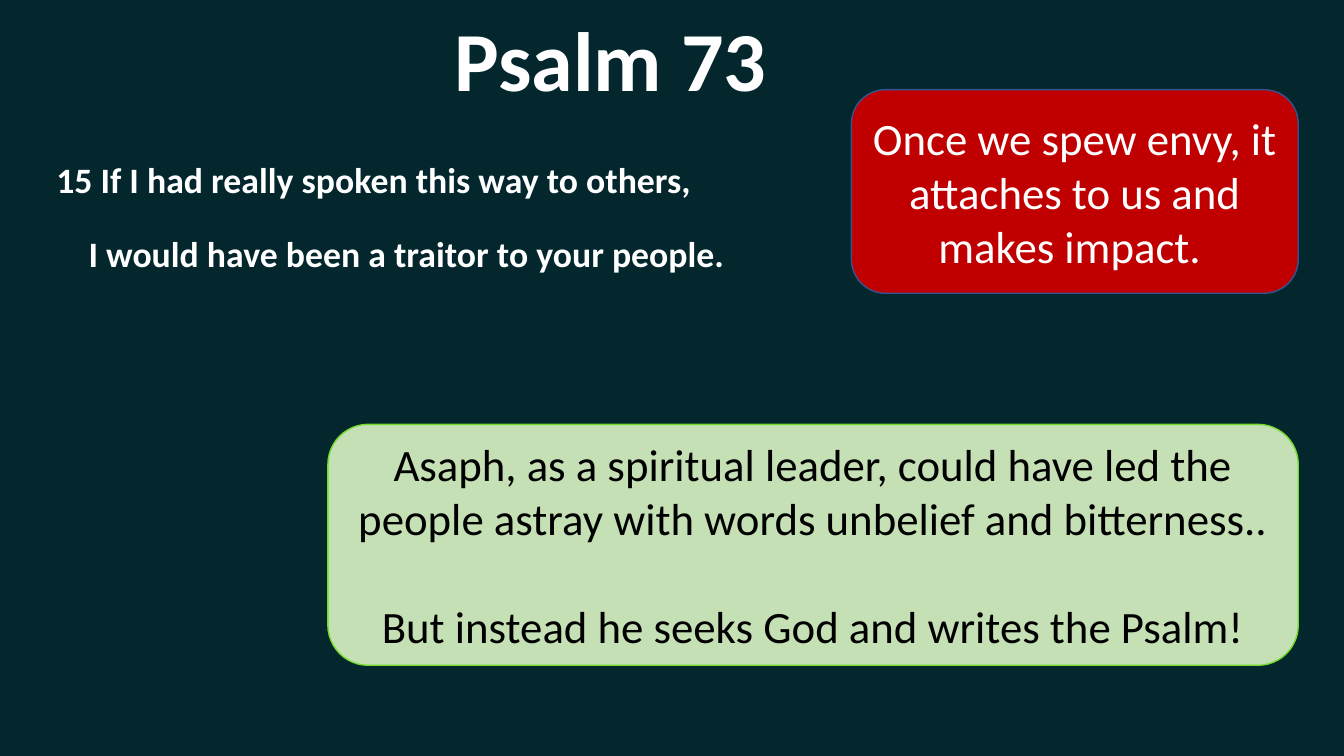
from pptx import Presentation
from pptx.dml.color import RGBColor
from pptx.enum.shapes import MSO_SHAPE
from pptx.enum.text import MSO_ANCHOR, PP_ALIGN
from pptx.util import Inches, Pt

SLIDE_WIDTH, SLIDE_HEIGHT = Inches(13.33), Inches(7.5)
FONT = "Calibri"
BACKGROUND = RGBColor(0x03, 0x27, 0x2D)
WHITE = RGBColor(0xFF, 0xFF, 0xFF)
BLACK = RGBColor(0x00, 0x00, 0x00)
RED = RGBColor(0xC0, 0x00, 0x00)
BLUE = RGBColor(0x32, 0x54, 0x91)
PALE_GREEN = RGBColor(0xC5, 0xE0, 0xB4)
BRIGHT_GREEN = RGBColor(0x72, 0xDB, 0x2B)


def place(left, top, width, height):
    """Turn percentages of the slide into a position and a size."""
    return (
        round(SLIDE_WIDTH * left / 100),
        round(SLIDE_HEIGHT * top / 100),
        round(SLIDE_WIDTH * width / 100),
        round(SLIDE_HEIGHT * height / 100),
    )


def write_lines(text_frame, lines, size, color, bold=False, align=PP_ALIGN.CENTER, gap=0):
    """Write one paragraph a line, with a gap in points between them."""
    text_frame.word_wrap = True
    for index, line in enumerate(lines):
        paragraph = text_frame.add_paragraph() if index else text_frame.paragraphs[0]
        paragraph.alignment = align
        paragraph.space_before = Pt(gap if index else 0)
        run = paragraph.add_run()
        run.text = line
        run.font.name = FONT
        run.font.size = Pt(size)
        run.font.bold = bold
        run.font.color.rgb = color


def add_title(slide, area, title):
    text_box = slide.shapes.add_textbox(*place(*area))
    write_lines(text_box.text_frame, [title], 60, WHITE, bold=True)


def add_verse(slide, area, lines):
    """Add raised verse text whose later lines are indented."""
    text_frame = slide.shapes.add_textbox(*place(*area)).text_frame
    write_lines(text_frame, lines, 44, WHITE, bold=True, align=PP_ALIGN.LEFT)
    for index, paragraph in enumerate(text_frame.paragraphs):
        if index:
            paragraph._p.get_or_add_pPr().set("marL", str(Inches(0.32)))
        for run in paragraph.runs:
            run._r.get_or_add_rPr().set("baseline", "30000")


def add_callout(slide, area, lines, fill, outline, color, gap=0):
    callout = slide.shapes.add_shape(MSO_SHAPE.ROUNDED_RECTANGLE, *place(*area))
    callout.shadow.inherit = False
    callout.fill.solid()
    callout.fill.fore_color.rgb = fill
    callout.line.color.rgb = outline
    callout.line.width = Pt(1)
    callout.text_frame.vertical_anchor = MSO_ANCHOR.MIDDLE
    write_lines(callout.text_frame, lines, 32, color, gap=gap)


def main():
    presentation = Presentation()
    presentation.slide_width, presentation.slide_height = SLIDE_WIDTH, SLIDE_HEIGHT
    slide = presentation.slides.add_slide(presentation.slide_layouts[6])
    slide.background.fill.solid()
    slide.background.fill.fore_color.rgb = BACKGROUND

    add_title(slide, (19.43, 0.4, 51.99, 14.8), "Psalm 73")
    add_verse(slide, (3.45, 19.2, 74.79, 27.73), [
        "15 If I had really spoken this way to others,",
        "I would have been a traitor to your people.",
    ])
    add_callout(slide, (63.35, 11.87, 33.25, 26.93), [
        "Once we spew envy, it attaches to us and makes impact. ",
    ], RED, BLUE, WHITE)
    add_callout(slide, (24.4, 56.13, 72.2, 31.87), [
        "Asaph, as a spiritual leader, could have led the people astray "
        "with words unbelief and bitterness..",
        "But instead he seeks God and writes the Psalm!",
    ], PALE_GREEN, BRIGHT_GREEN, BLACK, gap=39)

    presentation.save("out.pptx")


if __name__ == "__main__":
    main()
